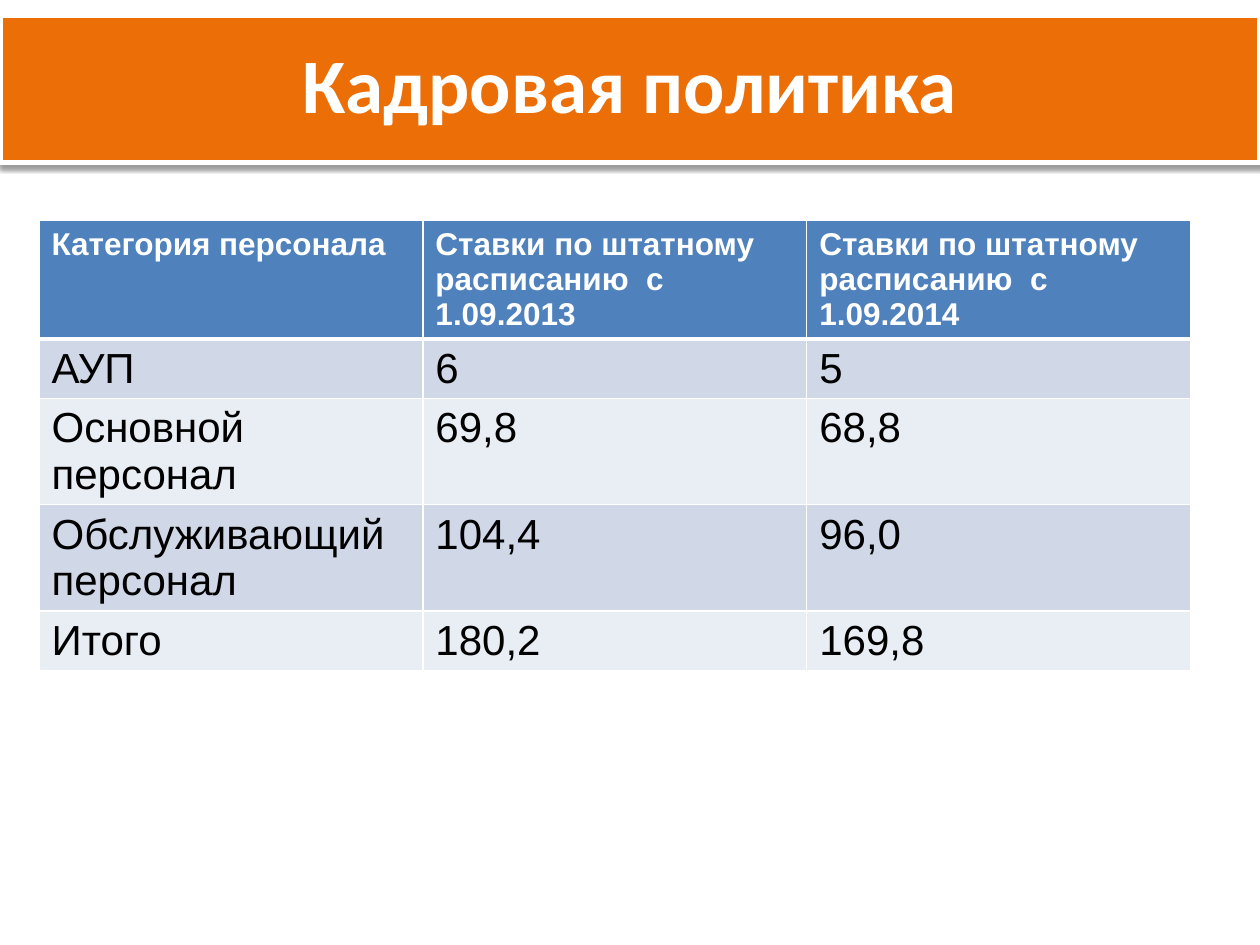
"""Build the staffing policy slide: a title band above a table of posts."""
from lxml.etree import SubElement
from pptx import Presentation
from pptx.dml.color import RGBColor
from pptx.enum.shapes import MSO_SHAPE
from pptx.enum.text import MSO_ANCHOR, PP_ALIGN
from pptx.oxml import parse_xml
from pptx.oxml.ns import nsdecls, qn
from pptx.util import Inches, Pt

HUES = {
    "band": "EB6E07",
    "head": "4F81BD",
    "odd": "D0D8E8",
    "even": "E9EDF4",
    "white": "FFFFFF",
    "black": "000000",
}
ROWS = [
    ["Категория персонала", "Ставки по штатному расписанию  с 1.09.2013",
     "Ставки по штатному расписанию  с 1.09.2014"],
    ["АУП", "6", "5"],
    ["Основной персонал", "69,8", "68,8"],
    ["Обслуживающий персонал", "104,4", "96,0"],
    ["Итого", "180,2", "169,8"],
]


def write(frame, text, face, size, hue, bold):
    run = frame.paragraphs[0].add_run()
    run.text = text
    run.font.name = face
    run.font.size = Pt(size)
    run.font.bold = bold
    run.font.color.rgb = RGBColor.from_string(HUES[hue])


def edge(cell, side, width):
    line = SubElement(cell._tc.get_or_add_tcPr(), qn(f"a:{side}"), w=str(Pt(width)))
    fill = SubElement(line, qn("a:solidFill"))
    SubElement(fill, qn("a:srgbClr"), val=HUES["white"])


deck = Presentation()
deck.slide_width = Inches(10)
deck.slide_height = Inches(7.5)
wide, high = deck.slide_width, deck.slide_height
slide = deck.slides.add_slide(deck.slide_layouts[5])
title = slide.shapes.title

band = slide.shapes.add_shape(
    MSO_SHAPE.RECTANGLE, 0, int(high * 0.016), wide, int(high * 0.156))
band.fill.solid()
band.fill.fore_color.rgb = RGBColor.from_string(HUES["band"])
band.line.color.rgb = RGBColor.from_string(HUES["white"])
band.line.width = Pt(3)
band._element.spPr.append(parse_xml(
    f'<a:effectLst {nsdecls("a")}>'
    f'<a:outerShdw blurRad="{Pt(3.1)}" dist="{Pt(1.6)}" dir="5400000" rotWithShape="0">'
    f'<a:srgbClr val="{HUES["black"]}"><a:alpha val="38000"/></a:srgbClr>'
    '</a:outerShdw></a:effectLst>'))
title._element.addprevious(band._element)

title.left, title.top = 0, int(high * 0.008)
title.width, title.height = wide, int(high * 0.16)
title.text_frame.vertical_anchor = MSO_ANCHOR.MIDDLE
title.text_frame.paragraphs[0].alignment = PP_ALIGN.CENTER
write(title.text_frame, "Кадровая политика", "Calibri", 44, "white", True)

frame = slide.shapes.add_table(
    len(ROWS), len(ROWS[0]), Inches(0.31), Inches(1.75), Inches(9.14), Inches(3.1))
table = frame.table
for row in table.rows:
    row.height = Inches(0.41)
frame.height = Inches(3.1)

for r, row in enumerate(ROWS):
    top = r == 0
    shade = "head" if top else "odd" if r % 2 else "even"
    for c, text in enumerate(row):
        cell = table.cell(r, c)
        write(cell.text_frame, text, "Arial", 18 if top else 24,
              "white" if top else "black", top)
        for side in ("lnL", "lnR", "lnT", "lnB"):
            thick = (top and side == "lnB") or (r == 1 and side == "lnT")
            edge(cell, side, 3 if thick else 1)
        cell.fill.solid()
        cell.fill.fore_color.rgb = RGBColor.from_string(HUES[shade])

deck.save("out.pptx")
